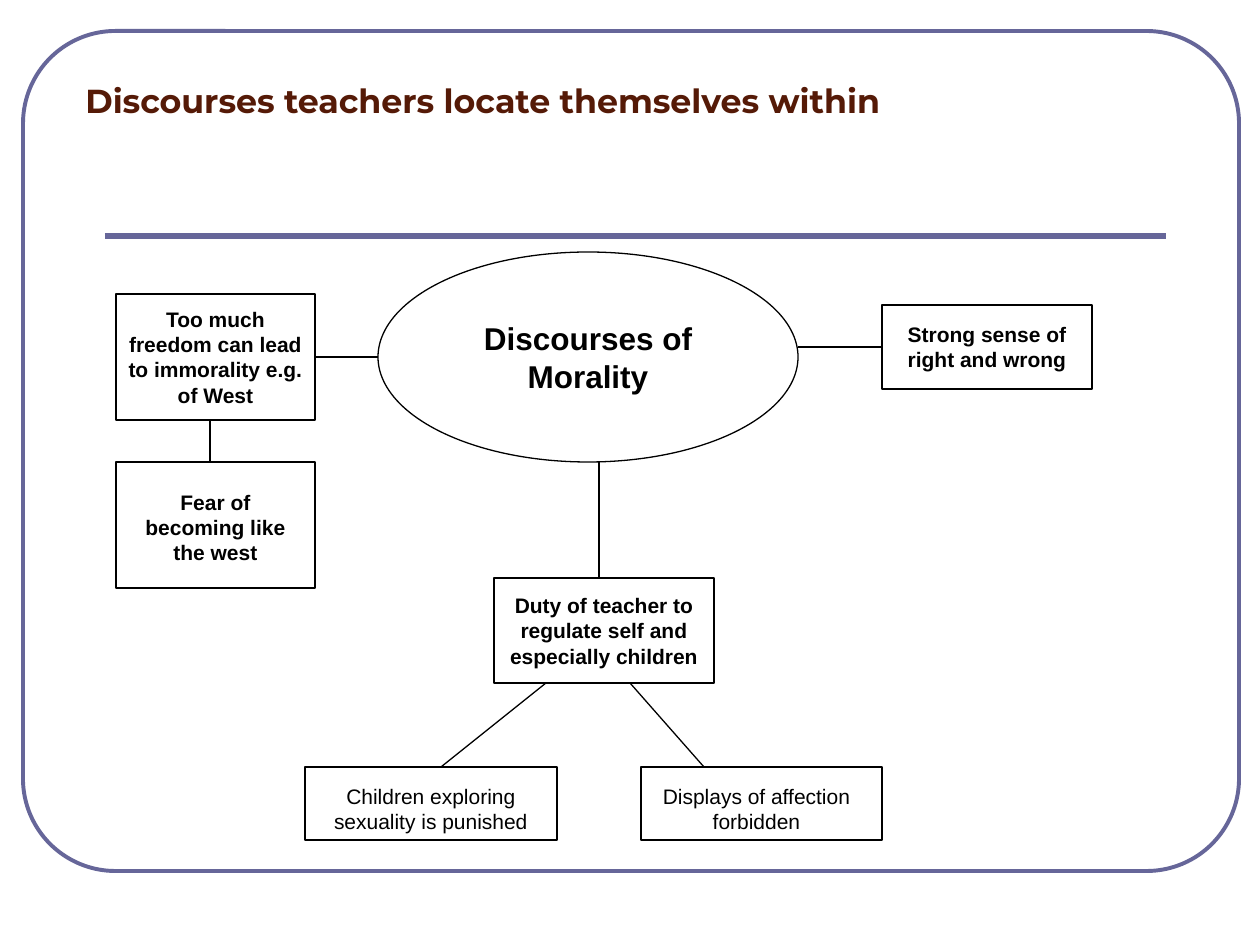
from pptx import Presentation
from pptx.dml.color import RGBColor
from pptx.enum.shapes import MSO_CONNECTOR, MSO_SHAPE
from pptx.enum.text import MSO_ANCHOR, PP_ALIGN
from pptx.oxml.ns import qn
from pptx.util import Emu, Pt
from lxml import etree

PX = 914400 / 126
RECTANGLE, ELLIPSE = MSO_SHAPE.RECTANGLE, MSO_SHAPE.OVAL
ROUNDED = MSO_SHAPE.ROUNDED_RECTANGLE
STRAIGHT = MSO_CONNECTOR.STRAIGHT
TOP, MIDDLE, BOTTOM = MSO_ANCHOR.TOP, MSO_ANCHOR.MIDDLE, MSO_ANCHOR.BOTTOM
LEFT, CENTER = PP_ALIGN.LEFT, PP_ALIGN.CENTER
COLORS = {"frame": "666699", "title": "551A07", "ink": "000000"}

NODES = [
    (ELLIPSE, (378, 252, 420, 210), "Discourses of Morality", 18),
    (RECTANGLE, (882, 305, 210, 84), "Strong sense of right and wrong", 12),
    (RECTANGLE, (494, 578, 220, 105),
     "Duty of teacher to regulate self and especially children", 12),
    (RECTANGLE, (116, 294, 199, 126),
     "Too much freedom can lead to immorality e.g. of West", 12),
]
CAPTIONED_BOXES = [
    ((305, 767, 252, 73), (305, 777, 252, 63),
     "Children exploring sexuality is punished", False),
    ((641, 767, 241, 73), (641, 777, 231, 63),
     "Displays of affection forbidden", False),
    ((116, 462, 199, 126), (126, 483, 179, 88),
     "Fear of becoming like the west", True),
]
LINKS = [
    (798, 347, 882, 347),
    (599, 462, 599, 578),
    (315, 357, 378, 357),
    (546, 683, 441, 767),
    (630, 683, 704, 767),
    (210, 420, 210, 462),
]


def px(value):
    return Emu(round(value * PX))


def color(name):
    return RGBColor.from_string(COLORS[name])


def write_text(shape, text, size=12, bold=True, font="Arial", ink="ink",
               align=CENTER, anchor=MIDDLE):
    frame = shape.text_frame
    frame.word_wrap = True
    frame.vertical_anchor = anchor
    paragraph = frame.paragraphs[0]
    paragraph.alignment = align
    run = paragraph.add_run()
    run.text = text
    run.font.name = font
    run.font.size = Pt(size)
    run.font.bold = bold
    run.font.color.rgb = color(ink)


def add_outline(slide, kind, box, line="ink", width=0.75):
    shape = slide.shapes.add_shape(kind, *map(px, box))
    shape.shadow.inherit = False
    shape.fill.background()
    shape.line.color.rgb = color(line)
    shape.line.width = Pt(width)
    return shape


def add_line(slide, ends, line="ink", width=0.75):
    connector = slide.shapes.add_connector(STRAIGHT, *map(px, ends))
    connector.line.color.rgb = color(line)
    connector.line.width = Pt(width)
    etree.SubElement(connector._element.spPr, qn("a:effectLst"))


def add_label(slide, box, text, **text_format):
    write_text(slide.shapes.add_textbox(*map(px, box)), text, **text_format)


def main():
    presentation = Presentation()
    presentation.slide_width, presentation.slide_height = px(1260), px(945)
    slide = presentation.slides.add_slide(presentation.slide_layouts[6])

    frame = add_outline(slide, ROUNDED, (23, 31, 1216, 840), "frame", 2.25)
    frame.adjustments[0] = 0.11
    add_line(slide, (105, 236, 1166, 236), "frame", 3)
    add_label(slide, (73, 0, 1124, 126),
              "Discourses teachers locate themselves within", size=19,
              font="Montserrat", ink="title", align=LEFT, anchor=BOTTOM)

    for kind, box, text, size in NODES:
        write_text(add_outline(slide, kind, box), text, size=size)
    for box, caption_box, text, bold in CAPTIONED_BOXES:
        add_outline(slide, RECTANGLE, box)
        add_label(slide, caption_box, text, bold=bold, anchor=TOP)
    for ends in LINKS:
        add_line(slide, ends)

    presentation.save("out.pptx")


if __name__ == "__main__":
    main()
